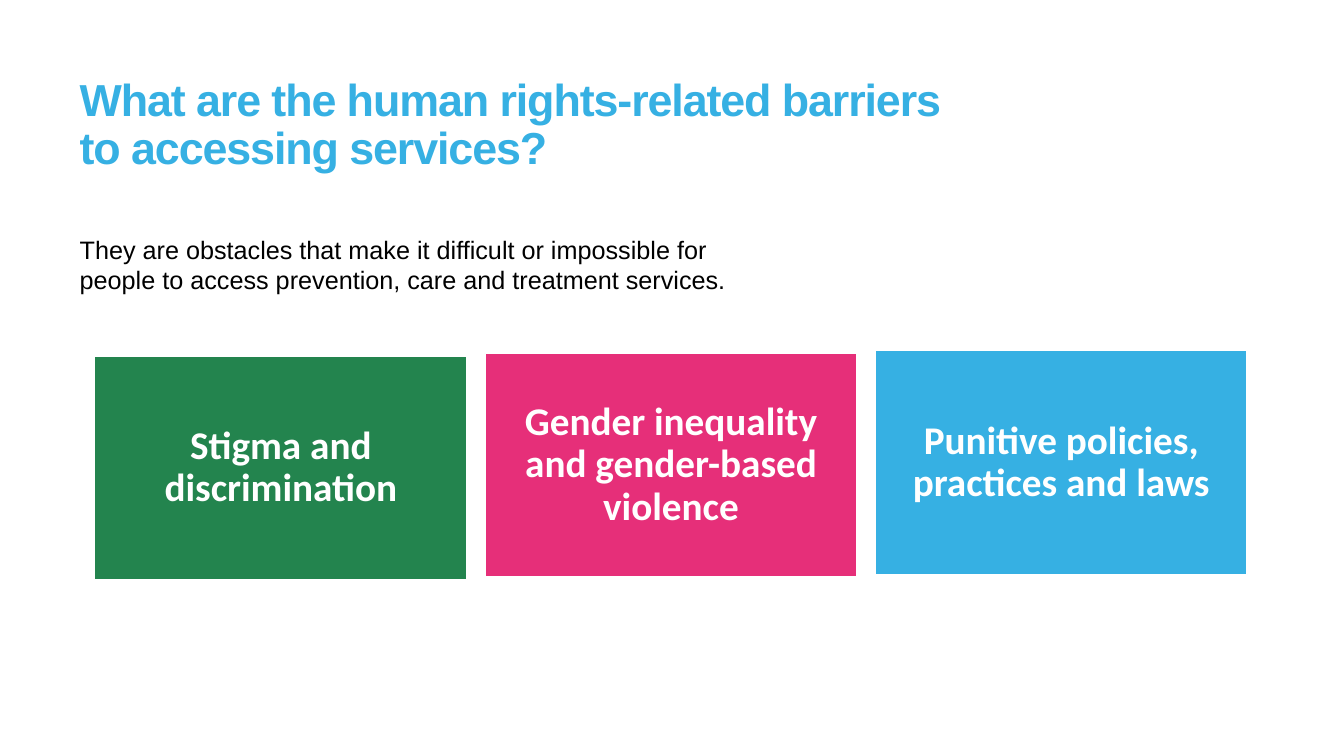
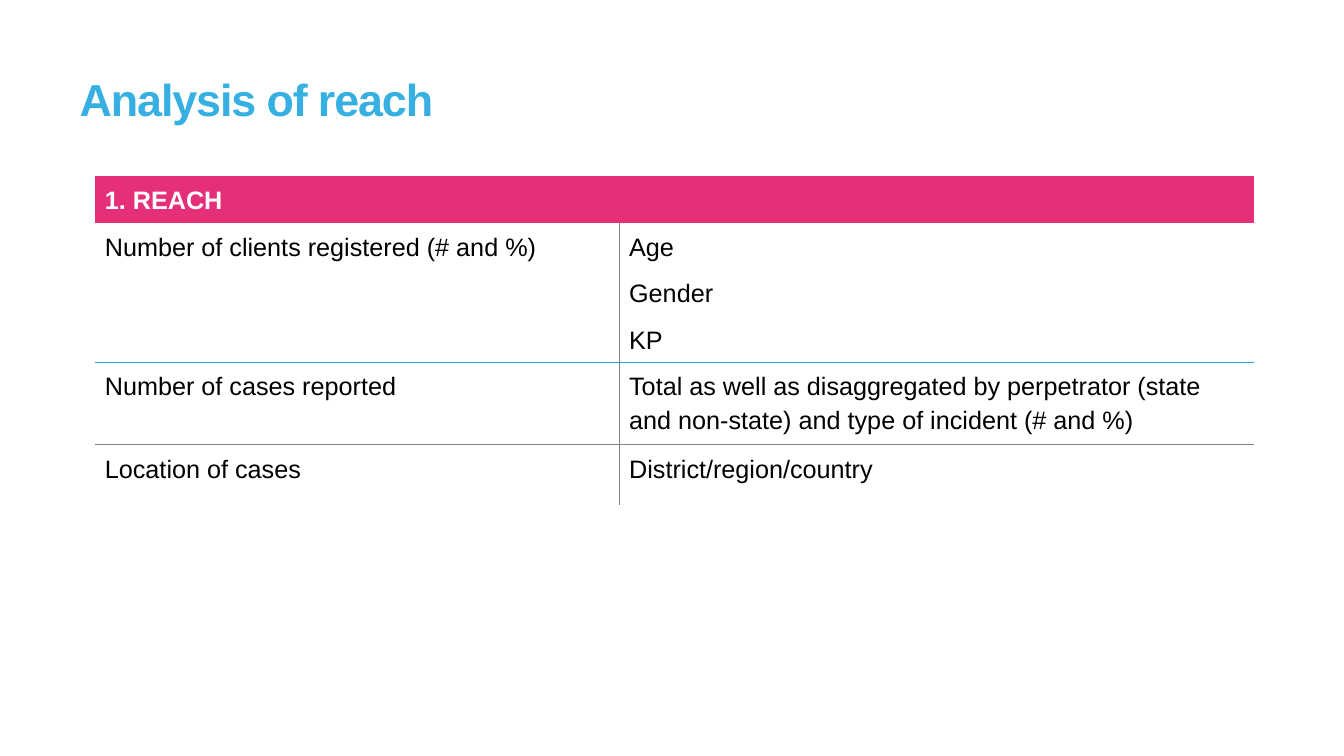
from pptx import Presentation
from pptx.dml.color import RGBColor
from pptx.enum.shapes import MSO_SHAPE
from pptx.enum.text import MSO_ANCHOR, PP_ALIGN
from pptx.oxml.ns import qn
from pptx.util import Inches, Pt
from lxml.etree import SubElement

# Content
TITLES = ["What are the human rights-related barriers to accessing services?",
          "Analysis of reach"]
INTRO = ("They are obstacles that make it difficult or impossible for people "
         "to access prevention, care and treatment services.")
BARRIERS = [("Stigma and discrimination", "green"),
            ("Gender inequality and gender-based violence", "pink"),
            ("Punitive policies, practices and laws", "blue")]
REACH = [("1. REACH", ""),
         ("Number of clients registered (# and %)", "Age"),
         ("", "Gender"),
         ("", "KP"),
         ("Number of cases reported",
          "Total as well as disaggregated by perpetrator (state and non-state) "
          "and type of incident (# and %)"),
         ("Location of cases", "District/region/country")]

# Shared style
COLORS = {"blue": "36B0E3", "green": "23844E", "pink": "E62F79",
          "rule": "2EA0DC", "grey": "808080", "white": "FFFFFF", "black": "000000"}
TITLE = {"name": "Arial", "size": Pt(32), "bold": True, "color": "blue"}
BODY = {"name": "Arial", "size": Pt(18), "bold": False, "color": "black"}
HEADER = {**BODY, "bold": True, "color": "white"}
BOX = {"name": "Calibri", "size": Pt(28), "bold": True, "color": "white"}
LEFT, INDENT = 0.79, 0.94

# Grid of boxes and table
BOX_W, BOX_H, BOX_PITCH, BOX_TOP, BOX_RISE = 3.69, 2.22, 3.87, 3.53, 0.025
COLS = [5.2, 6.3]
ROWS = [0.28, 0.28, 0.28, 0.28, 0.66, 0.6]
PLAIN_TABLE = "{2D5ABB26-0587-4C30-8999-92F81FD0307C}"
ROW_RULES = {3: "rule", 4: "grey"}


def rgb(name):
    return RGBColor.from_string(COLORS[name])


def write(tf, text, style, **para):
    p = tf.paragraphs[0]
    for key, value in para.items():
        setattr(p, key, value)
    r = p.add_run()
    r.text = text
    for key, value in style.items():
        if key == "color":
            r.font.color.rgb = rgb(value)
        else:
            setattr(r.font, key, value)
    return r


def set_margins(tf, x, y):
    tf.word_wrap = True
    tf.margin_left = tf.margin_right = Inches(x)
    tf.margin_top = tf.margin_bottom = Inches(y)


def add_text(s, box, text, style, pad_y=0, **para):
    tf = s.shapes.add_textbox(*map(Inches, box)).text_frame
    set_margins(tf, 0, pad_y)
    return write(tf, text, style, **para)


def add_slide(prs, title, title_h):
    s = prs.slides.add_slide(prs.slide_layouts[6])
    r = add_text(s, (LEFT, 0.72, 8.72, title_h), title, TITLE, 0.05, line_spacing=0.9)
    r.font._element.set("spc", "-80")
    return s


def add_box(s, i, text, color):
    box = (INDENT + i * BOX_PITCH, BOX_TOP - i * BOX_RISE, BOX_W, BOX_H)
    sp = s.shapes.add_shape(MSO_SHAPE.RECTANGLE, *map(Inches, box))
    sp.shadow.inherit = False
    sp.fill.solid()
    sp.fill.fore_color.rgb = rgb(color)
    sp.line.color.rgb = rgb("white")
    sp.line.width = Pt(1)
    set_margins(sp.text_frame, 0.12, 0.12)
    sp.text_frame.vertical_anchor = MSO_ANCHOR.MIDDLE
    write(sp.text_frame, text, BOX, alignment=PP_ALIGN.CENTER, line_spacing=0.9)


def set_borders(cell, sides):
    """Borders go before the fill, in the order L, R, T, B."""
    tc_pr = cell._tc.get_or_add_tcPr()
    for pos, side in enumerate(x for x in "LRTB" if sides.get(x)):
        ln = SubElement(tc_pr, qn(f"a:ln{side}"), w=str(Pt(0.5)))
        fill = SubElement(ln, qn("a:solidFill"))
        SubElement(fill, qn("a:srgbClr"), val=COLORS[sides[side]])
        tc_pr.insert(pos, ln)


def add_reach_table(s):
    size = (INDENT, 1.75, sum(COLS), sum(ROWS))
    table = s.shapes.add_table(len(ROWS), len(COLS), *map(Inches, size)).table
    table._tbl.tblPr.find(qn("a:tableStyleId")).text = PLAIN_TABLE
    table.horz_banding = False
    for col, width in zip(table.columns, COLS):
        col.width = Inches(width)
    for row, height in zip(table.rows, ROWS):
        row.height = Inches(height)
    table.cell(0, 0).merge(table.cell(0, 1))
    table.cell(1, 0).merge(table.cell(3, 0))

    for i, texts in enumerate(REACH):
        for j, text in enumerate(texts):
            cell = table.cell(i, j)
            if i == 0:
                cell.fill.solid()
                cell.fill.fore_color.rgb = rgb("pink")
            else:
                cell.fill.background()
                set_borders(cell, {"LR"[1 - j]: "grey", "T": ROW_RULES.get(i - 1),
                                   "B": ROW_RULES.get(3 if (i, j) == (1, 0) else i)})
            if text:
                write(cell.text_frame, text, BODY if i else HEADER,
                      line_spacing=1.2, space_after=Pt(3))


def main():
    prs = Presentation()
    prs.slide_width, prs.slide_height = Inches(13.33), Inches(7.5)

    # Barriers
    s = add_slide(prs, TITLES[0], 1.6)
    add_text(s, (LEFT, 2.32, 6.69, 0.69), INTRO, BODY)
    for i, (text, color) in enumerate(BARRIERS):
        add_box(s, i, text, color)

    # Reach
    add_reach_table(add_slide(prs, TITLES[1], 0.6))
    prs.save("out.pptx")


if __name__ == "__main__":
    main()
